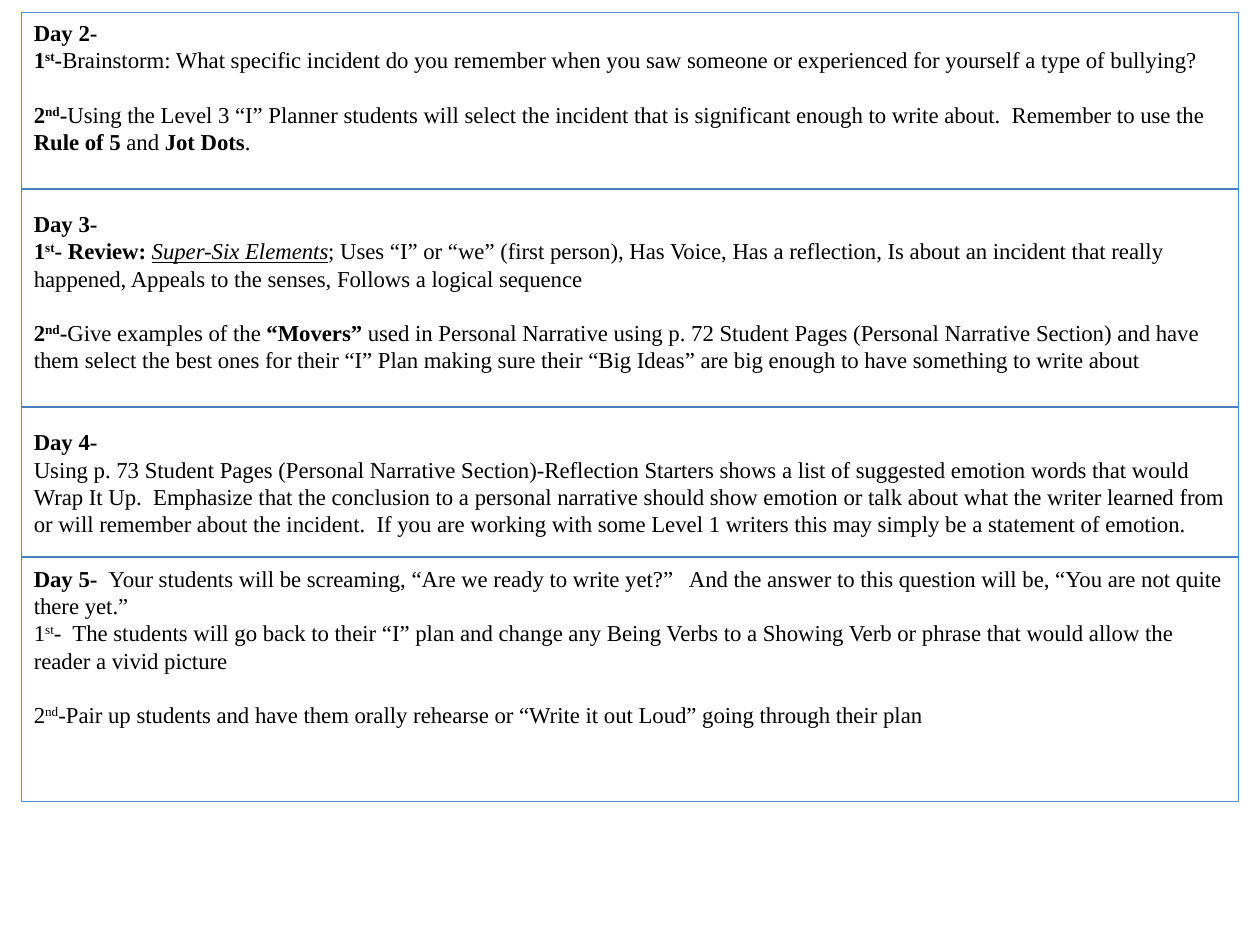
from pptx import Presentation
from pptx.dml.color import RGBColor
from pptx.enum.shapes import MSO_CONNECTOR, MSO_SHAPE
from pptx.enum.text import MSO_ANCHOR, PP_ALIGN
from pptx.oxml.ns import qn
from pptx.util import Inches, Pt
from lxml import etree

RECT = MSO_SHAPE.RECTANGLE
STRAIGHT = MSO_CONNECTOR.STRAIGHT
TOP, LEFT = MSO_ANCHOR.TOP, PP_ALIGN.LEFT
BLACK = RGBColor(0x00, 0x00, 0x00)
BORDER = RGBColor(0x55, 0x8E, 0xD5)
DIVIDER = RGBColor(0x4B, 0x7E, 0xBC)
BOLD = {"bold": True}
RAISED = {"raised": True}
BOLD_RAISED = {"bold": True, "raised": True}
TITLE = {"italic": True, "underline": True}

PLAN = [
    (0, [("Day 2-", BOLD)]),
    (0, [("1", BOLD), ("st", BOLD_RAISED), ("-", BOLD),
         ("Brainstorm: What specific incident do you remember when you saw someone or "
          "experienced for yourself a type of bullying?", {})]),
    (1, [("2", BOLD), ("nd", BOLD_RAISED), ("-", BOLD),
         ("Using the Level 3 “I” Planner students will select the incident that is "
          "significant enough to write about.  Remember to use the ", {}),
         ("Rule of 5 ", BOLD), ("and ", {}), ("Jot Dots", BOLD), (".", {})]),
    (2, [("Day 3-", BOLD)]),
    (0, [("1", BOLD), ("st", BOLD_RAISED), ("- Review: ", BOLD),
         ("Super-Six Elements", TITLE),
         ("; Uses “I” or “we” (first person), Has Voice, Has a reflection, Is about an "
          "incident that really happened, Appeals to the senses, Follows a logical "
          "sequence", {})]),
    (1, [("2", BOLD), ("nd", BOLD_RAISED), ("-", BOLD),
         ("Give examples of the ", {}), ("“Movers” ", BOLD),
         ("used in Personal Narrative using p. 72 Student Pages (Personal Narrative "
          "Section) and have them select the best ones for their “I” Plan making sure "
          "their “Big Ideas” are big enough to have something to write about", {})]),
    (2, [("Day 4-", BOLD)]),
    (0, [("Using p. 73 Student Pages (Personal Narrative Section)-Reflection Starters "
          "shows a list of suggested emotion words that would Wrap It Up.  Emphasize "
          "that the conclusion to a personal narrative should show emotion or talk "
          "about what the writer learned from or will remember about the incident.  If "
          "you are working with some Level 1 writers this may simply be a statement of "
          "emotion.", {})]),
    (1, [("Day 5-  ", BOLD),
         ("Your students will be screaming, “Are we ready to write yet?”   And the "
          "answer to this question will be, “You are not quite there yet.”", {})]),
    (0, [("1", {}), ("st", RAISED),
         ("-  The students will go back to their “I” plan and change any Being Verbs to "
          "a Showing Verb or phrase that would allow the reader a vivid picture", {})]),
    (1, [("2", {}), ("nd", RAISED),
         ("-Pair up students and have them orally rehearse or “Write it out Loud” going "
          "through their plan", {})]),
]


def add_run(p, text, font="Times New Roman", size=13, color=BLACK,
            bold=False, italic=False, underline=False, raised=False):
    """Append a formatted run to a paragraph."""
    r = p.add_run()
    r.text = text
    f = r.font
    f.name, f.size, f.color.rgb = font, Pt(size), color
    f.bold, f.italic, f.underline = bold, italic, underline
    if raised:
        r._r.get_or_add_rPr().set("baseline", "30000")


class SlideBuilder:
    """Hold the slide and its line style, and draw its elements."""

    def __init__(self, slide, line_width=0.75, pitch=15.6):
        self.s = slide
        self.line_width = Pt(line_width)
        self.pitch = pitch

    def text_box(self, x, y, w, h, plan):
        """Draw the bordered box with the lesson plan."""
        sp = self.s.shapes.add_shape(RECT, Inches(x), Inches(y), Inches(w), Inches(h))
        sp.shadow.inherit = False
        sp.fill.background()
        sp.line.color.rgb = BORDER
        sp.line.width = self.line_width
        tf = sp.text_frame
        tf.word_wrap = True
        tf.vertical_anchor = TOP
        for i, (gap, runs) in enumerate(plan):
            p = tf.paragraphs[0] if i == 0 else tf.add_paragraph()
            p.alignment = LEFT
            p.line_spacing = Pt(self.pitch)
            if gap:
                p.space_before = Pt(gap * self.pitch)
            for text, style in runs:
                add_run(p, text, **style)

    def divider(self, x, y, w):
        """Draw a horizontal line between two days."""
        line = self.s.shapes.add_connector(
            STRAIGHT, Inches(x), Inches(y), Inches(x + w), Inches(y))
        line.line.color.rgb = DIVIDER
        line.line.width = self.line_width
        etree.SubElement(line._element.spPr, qn("a:effectLst"))


def main():
    """Build and save the slide."""
    prs = Presentation()
    prs.slide_width, prs.slide_height = Inches(10), Inches(7.5)
    builder = SlideBuilder(prs.slides.add_slide(prs.slide_layouts[6]))
    x, w = 0.17, 9.66
    builder.text_box(x, 0.1, w, 6.26, PLAN)
    for y in (1.5, 3.23, 4.42):
        builder.divider(x, y, w)
    prs.save("out.pptx")


if __name__ == "__main__":
    main()
